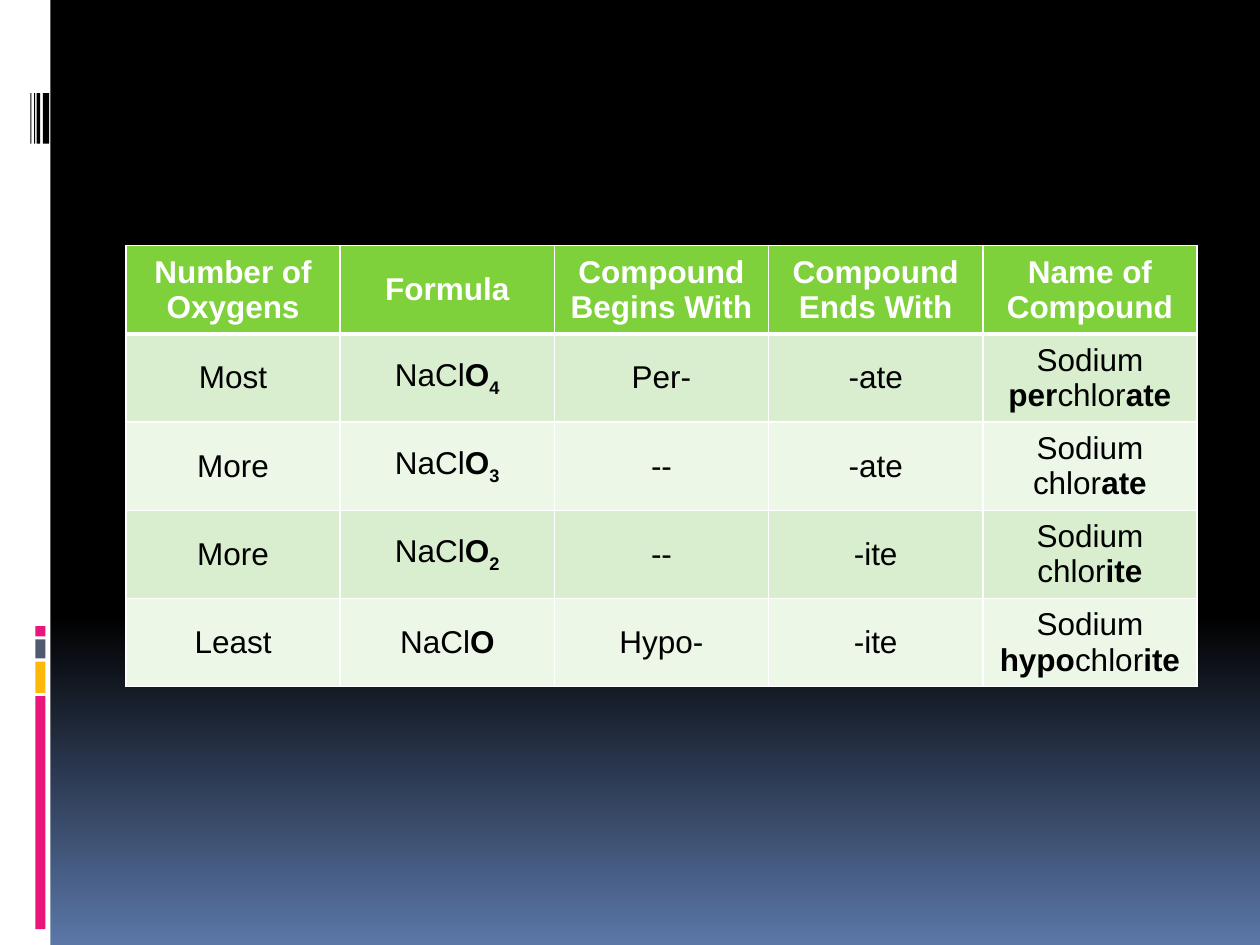
from copy import deepcopy
from dataclasses import dataclass

from lxml.etree import SubElement
from pptx import Presentation
from pptx.dml.color import RGBColor as Color
from pptx.enum.shapes import MSO_SHAPE as Shape
from pptx.enum.text import MSO_ANCHOR as Anchor, PP_ALIGN as Align
from pptx.oxml.ns import qn
from pptx.util import Inches, Pt


@dataclass(frozen=True)
class Theme:
    font: str = "Arial"
    size: int = 18
    white: str = "FFFFFF"
    black: str = "000000"
    pink: str = "EA157A"
    amber: str = "FEB80A"
    slate: str = "4E5B6F"
    sky: str = "5B77A8"
    header: str = "7FD13B"
    bands: tuple = ("D8EECE", "ECF7E8")
    thin: int = 1
    thick: int = 3


THEME = Theme()
WIDTH, HEIGHT = 10, 7.5
BACKDROP = [(0, THEME.black), (0.65, THEME.black), (1, THEME.sky)]

ROWS = [
    ["*Number of Oxygens*", "*Formula*", "*Compound Begins With*",
     "*Compound Ends With*", "*Name of Compound*"],
    ["Most", "NaCl*O**4*", "Per-", "-ate", "Sodium *per*chlor*ate*"],
    ["More", "NaCl*O**3*", "--", "-ate", "Sodium chlor*ate*"],
    ["More", "NaCl*O**2*", "--", "-ite", "Sodium chlor*ite*"],
    ["Least", "NaCl*O*", "Hypo-", "-ite", "Sodium *hypo*chlor*ite*"],
]
TABLE_LEFT, TABLE_TOP = 0.1 * WIDTH, 0.26 * HEIGHT
COLUMN_WIDTH, ROW_HEIGHT = 0.17 * WIDTH, 0.7

STRIP_WIDTH = 0.04 * WIDTH
BLOCK_LEFT, BLOCK_TOP, BLOCK_WIDTH, BLOCK_GAP = 0.28, 4.97, 0.08, 0.025
BLOCKS = [(0.08, THEME.pink), (0.15, THEME.slate),
          (0.25, THEME.amber), (1.85, THEME.pink)]
BAR_TOP, BAR_HEIGHT = 0.74, 0.4
BARS = [(0.34, 0.05), (0.29, 0.03), (0.27, 0.01), (0.24, 0.01)]


def paint_backdrop(page):
    fill = page.background.fill
    fill.gradient()
    fill.gradient_angle = 270
    stop_list = next(page.element.iter(qn("a:gsLst")))
    stop_list.append(deepcopy(stop_list[-1]))
    for stop, (position, color) in zip(fill.gradient_stops, BACKDROP):
        stop.position = position
        stop.color.rgb = Color.from_string(color)


def add_block(page, left, top, width, height, color):
    block = page.shapes.add_shape(
        Shape.RECTANGLE, *map(Inches, (left, top, width, height)))
    block.shadow.inherit = False
    block.fill.solid()
    block.fill.fore_color.rgb = Color.from_string(color)
    block.line.fill.background()


def add_sidebar(page):
    add_block(page, 0, 0, STRIP_WIDTH, HEIGHT, THEME.white)
    top = BLOCK_TOP
    for height, color in BLOCKS:
        add_block(page, BLOCK_LEFT, top, BLOCK_WIDTH, height, color)
        top += height + BLOCK_GAP
    for left, width in BARS:
        add_block(page, left, BAR_TOP, width, BAR_HEIGHT, THEME.black)


def border_cell(cell, row):
    widths = {
        "a:lnL": THEME.thin,
        "a:lnR": THEME.thin,
        "a:lnT": THEME.thick if row == 1 else THEME.thin,
        "a:lnB": THEME.thick if row == 0 else THEME.thin,
    }
    properties = cell._tc.get_or_add_tcPr()
    for side, width in widths.items():
        line = SubElement(properties, qn(side), w=str(Pt(width)))
        solid = SubElement(line, qn("a:solidFill"))
        SubElement(solid, qn("a:srgbClr"), val=THEME.white)


def write_cell(cell, marked_text, color):
    cell.vertical_anchor = Anchor.MIDDLE
    para = cell.text_frame.paragraphs[0]
    para.alignment = Align.CENTER
    for index, text in enumerate(marked_text.split("*")):
        if not text:
            continue
        span = para.add_run()
        span.text = text
        span.font.name = THEME.font
        span.font.size = Pt(THEME.size)
        span.font.bold = index % 2 == 1
        span.font.color.rgb = Color.from_string(color)
        if text.isdigit():
            span.font._element.set("baseline", "-25000")


def add_compound_table(page):
    row_count, column_count = len(ROWS), len(ROWS[0])
    table = page.shapes.add_table(
        row_count, column_count, Inches(TABLE_LEFT), Inches(TABLE_TOP),
        Inches(COLUMN_WIDTH * column_count),
        Inches(ROW_HEIGHT * row_count)).table
    for row, texts in enumerate(ROWS):
        is_header = row == 0
        fill = THEME.header if is_header else THEME.bands[(row - 1) % 2]
        ink = THEME.white if is_header else THEME.black
        for column, text in enumerate(texts):
            cell = table.cell(row, column)
            write_cell(cell, text, ink)
            border_cell(cell, row)
            cell.fill.solid()
            cell.fill.fore_color.rgb = Color.from_string(fill)


def main():
    deck = Presentation()
    deck.slide_width, deck.slide_height = Inches(WIDTH), Inches(HEIGHT)
    page = deck.slides.add_slide(deck.slide_layouts[6])
    paint_backdrop(page)
    add_sidebar(page)
    add_compound_table(page)
    deck.save("out.pptx")


if __name__ == "__main__":
    main()
